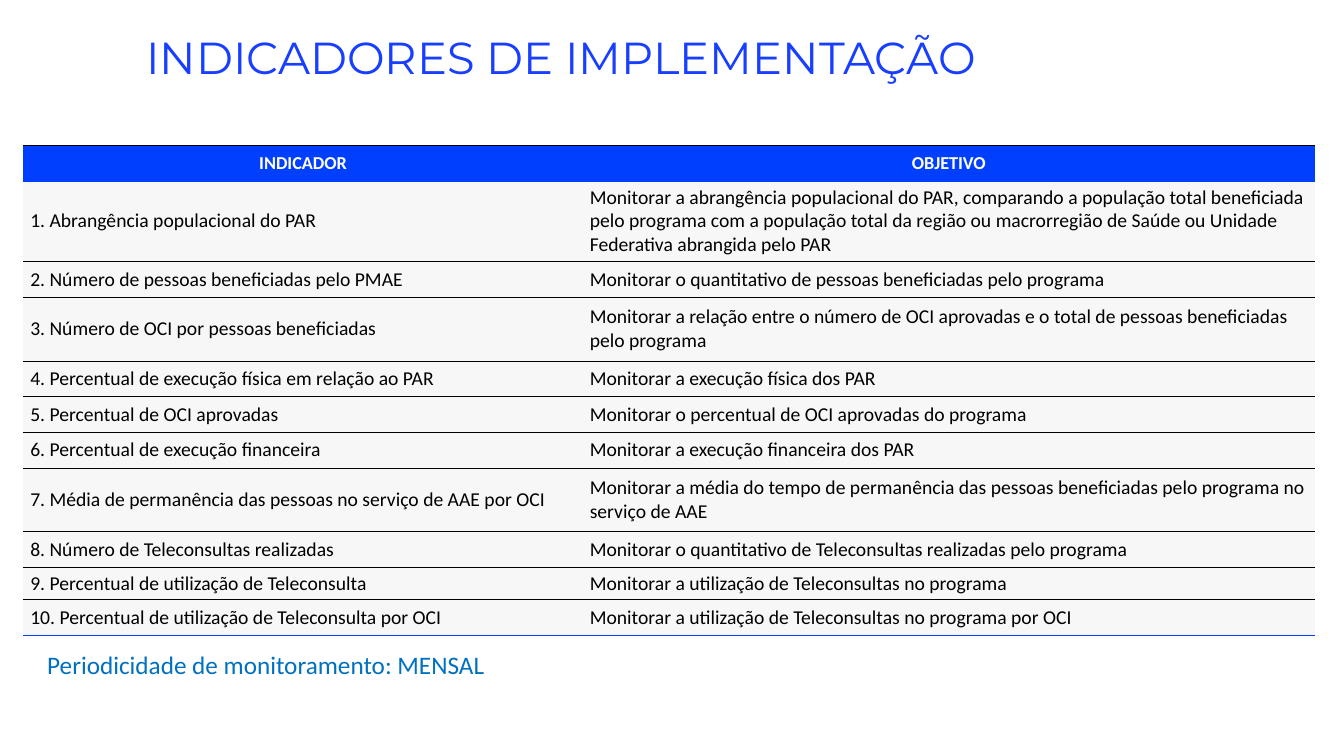
from dataclasses import dataclass

from lxml import etree
from pptx import Presentation
from pptx import util as u
from pptx.dml.color import RGBColor
from pptx.enum import text
from pptx.oxml.ns import qn

WIDTH, HEIGHT = u.Inches(13.33), u.Inches(7.5)
BLUE, BLACK, WHITE, GREY = "013FFE", "000000", "FFFFFF", "F7F7F7"


@dataclass(frozen=True)
class Indicator:
    name: str
    goal: str
    height: float = 4.73  # percent of the slide height


@dataclass(frozen=True)
class Label:
    words: str
    left: float  # places and sizes in percent of the slide
    top: float
    width: float
    height: float
    font: str
    size: float
    color: str


@dataclass(frozen=True)
class Rule:
    color: str
    points: float


HEADER = Indicator("INDICADOR", "OBJETIVO")
INDICATORS = [
    Indicator("Abrangência populacional do PAR",
              "Monitorar a abrangência populacional do PAR, comparando a população total "
              "beneficiada pelo programa com a população total da região ou macrorregião "
              "de Saúde ou Unidade Federativa abrangida pelo PAR", 10.67),
    Indicator("Número de pessoas beneficiadas pelo PMAE",
              "Monitorar o quantitativo de pessoas beneficiadas pelo programa"),
    Indicator("Número de OCI por pessoas beneficiadas",
              "Monitorar a relação entre o número de OCI aprovadas e o total de pessoas "
              "beneficiadas pelo programa", 8.4),
    Indicator("Percentual de execução física em relação ao PAR",
              "Monitorar a execução física dos PAR"),
    Indicator("Percentual de OCI aprovadas",
              "Monitorar o percentual de OCI aprovadas do programa"),
    Indicator("Percentual de execução financeira",
              "Monitorar a execução financeira dos PAR"),
    Indicator("Média de permanência das pessoas no serviço de AAE por OCI",
              "Monitorar a média do tempo de permanência das pessoas beneficiadas pelo "
              "programa no serviço de AAE", 8.4),
    Indicator("Número de Teleconsultas realizadas",
              "Monitorar o quantitativo de Teleconsultas realizadas pelo programa"),
    Indicator("Percentual de utilização de Teleconsulta",
              "Monitorar a utilização de Teleconsultas no programa", 4.27),
    Indicator("Percentual de utilização de Teleconsulta por OCI",
              "Monitorar a utilização de Teleconsultas no programa por OCI"),
]
COLUMNS = (41.63, 54.46)
LABELS = [
    Label("Periodicidade de monitoramento: MENSAL",
          2.78, 85.2, 42.46, 5.33, "Calibri", 18, "0070C0"),
    Label("INDICADORES DE IMPLEMENTAÇÃO",
          10.13, 3.33, 74.42, 8.53, "Montserrat", 32, "183EFF"),
]
HEAD_RULE, ROW_RULE, LAST_RULE = Rule(BLUE, 1.5), Rule(BLACK, 0.25), Rule(BLUE, 1)


def across(percent: float) -> int:
    return round(WIDTH * percent / 100)


def down(percent: float) -> int:
    return round(HEIGHT * percent / 100)


def paint(target, color: str) -> None:
    """Give a fill or a font a solid colour."""
    if hasattr(target, "solid"):
        target.solid()
        target.fore_color.rgb = RGBColor.from_string(color)
    else:
        target.color.rgb = RGBColor.from_string(color)


def set_borders(cell, top: Rule, bottom: Rule) -> None:
    """Rule a cell above and below, leaving its sides open."""
    properties = cell._tc.get_or_add_tcPr()
    sides = {"lnL": None, "lnR": None, "lnT": top, "lnB": bottom}
    for index, (side, rule) in enumerate(sides.items()):
        line = etree.Element(qn(f"a:{side}"))
        if rule is None:
            etree.SubElement(line, qn("a:noFill"))
        else:
            line.set("w", str(u.Pt(rule.points)))
            solid = etree.SubElement(line, qn("a:solidFill"))
            etree.SubElement(solid, qn("a:srgbClr")).set("val", rule.color)
        properties.insert(index, line)


def fill_cell(cell, words: str, header: bool, top: Rule, bottom: Rule) -> None:
    cell.text = words
    cell.margin_left = cell.margin_right = u.Inches(0.07)
    cell.margin_top = cell.margin_bottom = u.Inches(0.04)
    para = cell.text_frame.paragraphs[0]
    para.font.name = "Calibri"
    para.font.size = u.Pt(13 if header else 14)
    para.font.bold = header
    paint(para.font, WHITE if header else BLACK)
    if header:
        para.alignment = text.PP_ALIGN.CENTER
        para.line_spacing = u.Pt(18)
    else:
        cell.vertical_anchor = text.MSO_ANCHOR.MIDDLE
    paint(cell.fill, BLUE if header else GREY)
    set_borders(cell, top, bottom)


def add_indicators(page) -> None:
    entries = [HEADER, *INDICATORS]
    table = page.shapes.add_table(
        len(entries), len(COLUMNS), across(1.73), down(19.2), across(sum(COLUMNS)),
        down(sum(entry.height for entry in entries))).table
    table.horz_banding = False
    for column, width in zip(table.columns, COLUMNS):
        column.width = across(width)
    rules = [ROW_RULE, HEAD_RULE, *[ROW_RULE] * (len(INDICATORS) - 1), LAST_RULE]
    for number, entry in enumerate(entries):
        table.rows[number].height = down(entry.height)
        header = number == 0
        name = entry.name if header else f"{number}. {entry.name}"
        for column, words in enumerate((name, entry.goal)):
            fill_cell(table.cell(number, column), words, header,
                      rules[number], rules[number + 1])


def add_label(page, label: Label) -> None:
    box = page.shapes.add_textbox(across(label.left), down(label.top),
                                  across(label.width), down(label.height))
    frame = box.text_frame
    frame.word_wrap = True
    frame.auto_size = text.MSO_AUTO_SIZE.SHAPE_TO_FIT_TEXT
    para = frame.paragraphs[0]
    para.text = label.words
    para.font.name = label.font
    para.font.size = u.Pt(label.size)
    paint(para.font, label.color)


def main() -> None:
    deck = Presentation()
    deck.slide_width, deck.slide_height = WIDTH, HEIGHT
    page = deck.slides.add_slide(deck.slide_layouts[6])

    # Table of indicators
    add_indicators(page)

    # Title and note on frequency
    for label in LABELS:
        add_label(page, label)

    deck.save("out.pptx")


if __name__ == "__main__":
    main()
